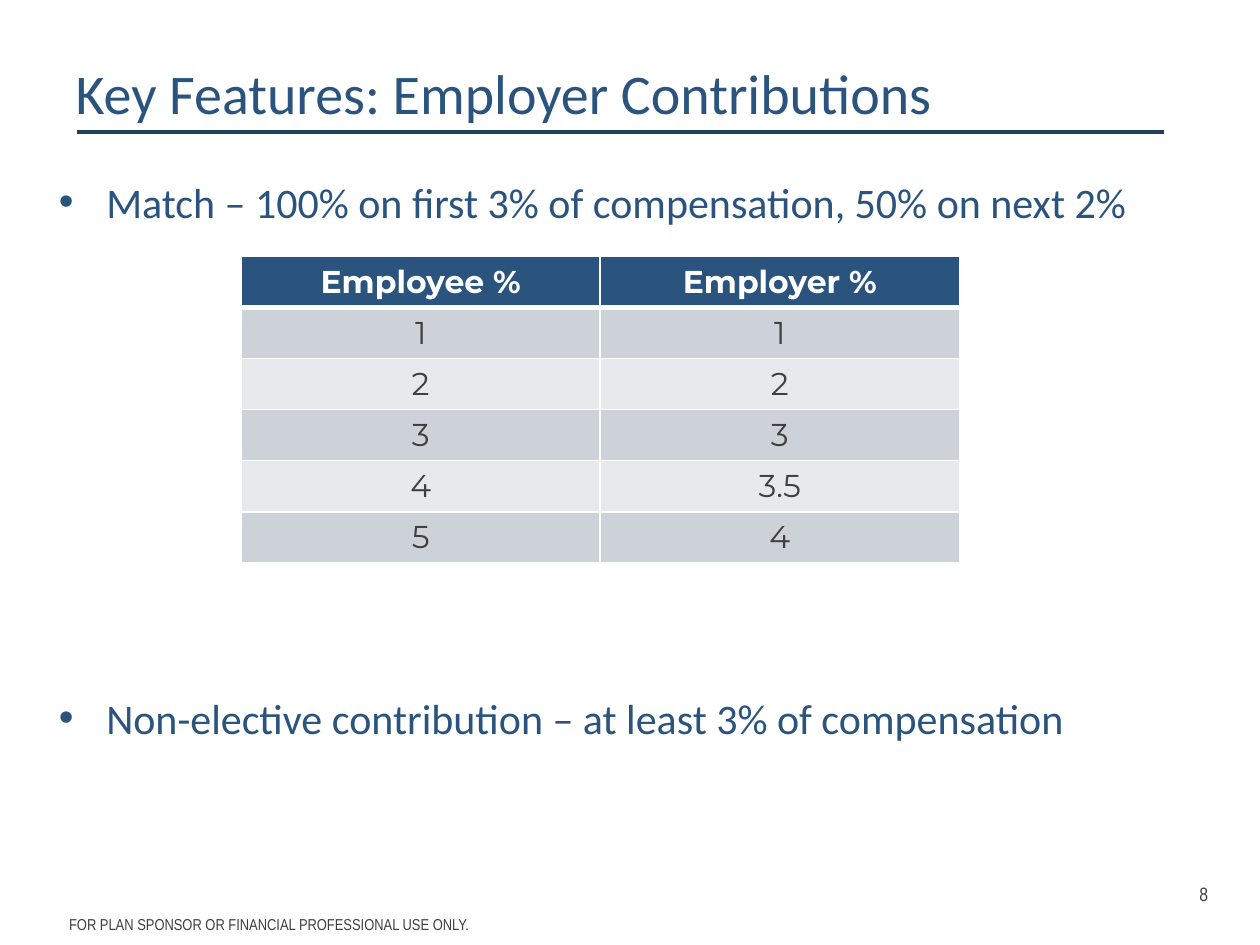
from lxml.etree import SubElement
from pptx import Presentation
from pptx.dml.color import RGBColor
from pptx.enum.shapes import MSO_CONNECTOR
from pptx.enum.text import MSO_ANCHOR, PP_ALIGN
from pptx.oxml.ns import qn
from pptx.util import Pt

BLUE = RGBColor(0x2A, 0x54, 0x7E)
NAVY = RGBColor(0x20, 0x3F, 0x5E)
GREY = RGBColor(0x3F, 0x3F, 0x3F)
WHITE = RGBColor(0xFF, 0xFF, 0xFF)
DARK_BAND = RGBColor(0xCD, 0xD1, 0xD8)
LIGHT_BAND = RGBColor(0xE8, 0xE9, 0xEC)

TITLE = {"name": "Calibri", "size": Pt(32), "color": BLUE}
BODY = {"name": "Calibri", "size": Pt(24), "color": BLUE}
HEADER = {"name": "Montserrat", "size": Pt(18), "bold": True, "color": WHITE}
VALUE = {**HEADER, "bold": False, "color": GREY}
FOOTER = {"name": "Arial Narrow", "size": Pt(9), "color": GREY}
NUMBER = {**FOOTER, "size": Pt(11)}

MATCH_ROWS = [
    ("Employee %", "Employer %"),
    ("1", "1"),
    ("2", "2"),
    ("3", "3"),
    ("4", "3.5"),
    ("5", "4"),
]


def add_span(para, text, style):
    span = para.add_run()
    span.text = text
    for name, value in style.items():
        if name == "color":
            span.font.color.rgb = value
        else:
            setattr(span.font, name, value)


def add_bullet(para, indent):
    properties = para._p.get_or_add_pPr()
    properties.set("marL", str(indent))
    properties.set("indent", str(-indent))
    SubElement(properties, qn("a:buFont"), typeface="Arial")
    SubElement(properties, qn("a:buChar"), char="•")


def set_title(page, text):
    title = page.shapes.title
    place = {"left": Pt(36), "top": Pt(12.24), "width": Pt(648), "height": Pt(80.64)}
    for name, value in place.items():
        setattr(title, name, value)
    title.text_frame.vertical_anchor = MSO_ANCHOR.MIDDLE
    para = title.text_frame.paragraphs[0]
    para.alignment = PP_ALIGN.LEFT
    add_span(para, text, TITLE)


def add_text(page, left, top, width, height):
    frame = page.shapes.add_textbox(Pt(left), Pt(top), Pt(width), Pt(height)).text_frame
    frame.word_wrap = True
    return frame


def add_label(page, text, style, *place):
    add_span(add_text(page, *place).paragraphs[0], text, style)


def add_bullets(page, texts, gap, *place):
    frame = add_text(page, *place)
    for index, text in enumerate(texts):
        para = frame.add_paragraph() if index else frame.paragraphs[0]
        if index:
            para.space_before = Pt(gap)
        add_bullet(para, Pt(27))
        add_span(para, text, BODY)


def add_rule(page, left, right, y):
    rule = page.shapes.add_connector(MSO_CONNECTOR.STRAIGHT, Pt(left), Pt(y), Pt(right), Pt(y))
    rule.line.color.rgb = NAVY
    rule.line.width = Pt(2)
    SubElement(rule._element.spPr, qn("a:effectLst"))


def set_borders(cell, bottom):
    properties = cell._tc.get_or_add_tcPr()
    widths = {"a:lnL": 1, "a:lnR": 1, "a:lnT": 1, "a:lnB": bottom}
    for tag, width in widths.items():
        line = SubElement(properties, qn(tag), w=str(Pt(width)))
        fill = SubElement(line, qn("a:solidFill"))
        SubElement(fill, qn("a:srgbClr"), val=str(WHITE))


def add_match_table(page, rows, left, top, width, row_height):
    table = page.shapes.add_table(
        len(rows), len(rows[0]), Pt(left), Pt(top), Pt(width), Pt(row_height * len(rows))
    ).table
    for row_index, row in enumerate(rows):
        is_header = row_index == 0
        band = DARK_BAND if row_index % 2 else LIGHT_BAND
        for column_index, text in enumerate(row):
            cell = table.cell(row_index, column_index)
            # Borders come before the fill in the cell's XML
            set_borders(cell, 3 if is_header else 1)
            cell.fill.solid()
            cell.fill.fore_color.rgb = BLUE if is_header else band
            para = cell.text_frame.paragraphs[0]
            para.alignment = PP_ALIGN.CENTER
            add_span(para, text, HEADER if is_header else VALUE)


def main():
    deck = Presentation()
    deck.slide_width, deck.slide_height = Pt(720), Pt(540)
    page = deck.slides.add_slide(deck.slide_layouts[5])

    # Heading
    set_title(page, "Key Features: Employer Contributions")

    # Contribution options, with room between them for the table
    options = [
        "Match – 100% on first 3% of compensation, 50% on next 2%",
        "Non-elective contribution – at least 3% of compensation",
    ]
    add_bullets(page, options, 266, 26.64, 97.2, 720 - 26.64, 401.76)
    add_rule(page, 44, 665, 75.6)
    add_match_table(page, MATCH_ROWS, 137.8, 146.5, 410.4, 29.2)

    # Footer
    add_label(page, "FOR PLAN SPONSOR OR FINANCIAL PROFESSIONAL USE ONLY.", FOOTER,
              32.4, 519.1, 632.9, 20.9)
    add_label(page, "8", NUMBER, 678.24, 500.4, 30.24, 28.8)

    deck.save("out.pptx")


if __name__ == "__main__":
    main()
